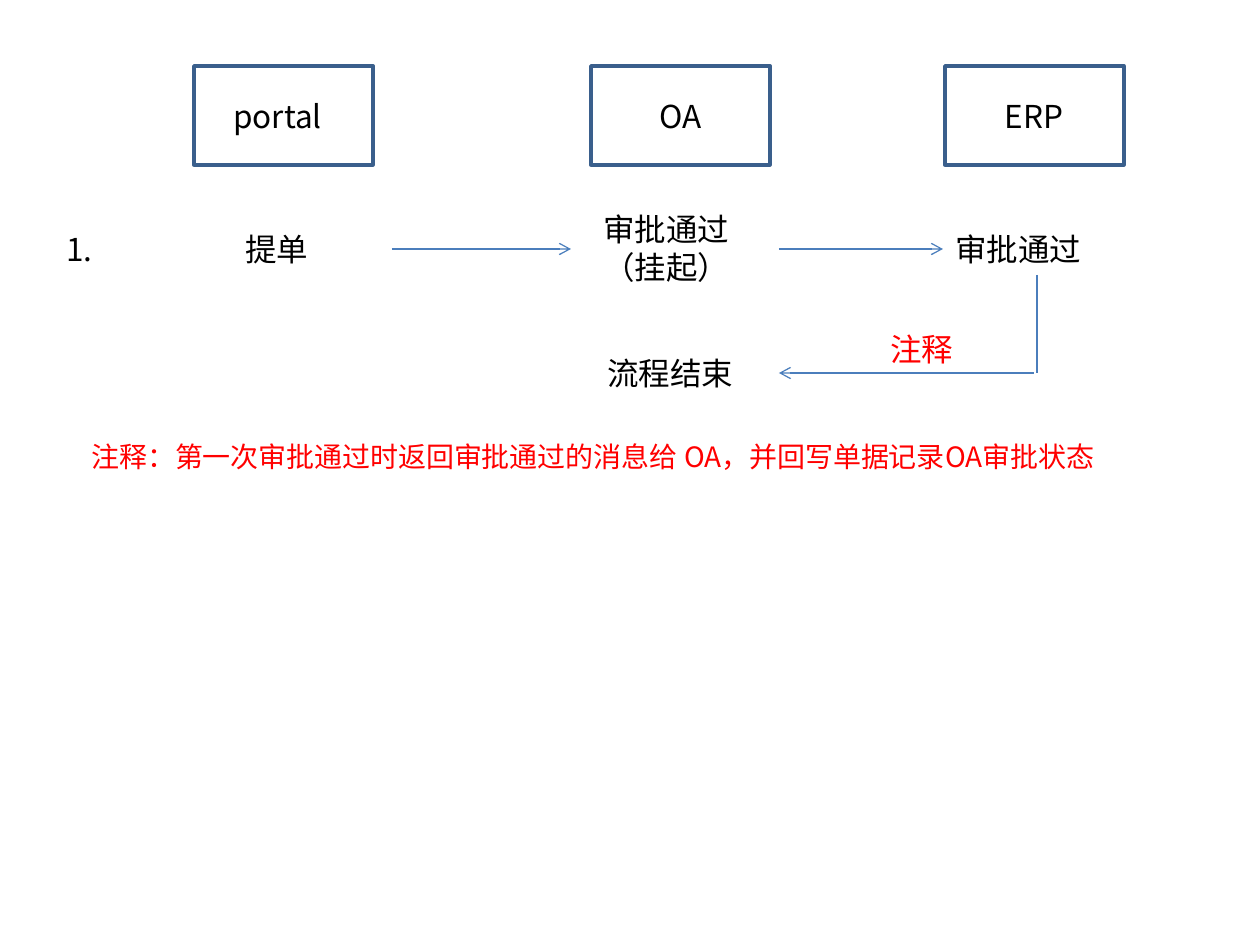
from typing import NamedTuple

from lxml import etree
from pptx import Presentation, util as u
from pptx.dml.color import RGBColor
from pptx.enum import shapes, text
from pptx.oxml.ns import qn

SCALE = 914400 / 126
FONT = "Noto Sans CJK SC"
BLACK, WHITE, RED = "000000", "FFFFFF", "FF0000"
EDGE, BLUE = "3A5F8C", "4B7EBC"
PAD = 13


class Box(NamedTuple):
    words: str
    left: int
    shift: int = 0


class Label(NamedTuple):
    words: str
    left: int
    top: int
    width: int
    height: int = 50
    size: int = 18
    hue: str = BLACK
    wrap: bool = True


class Line(NamedTuple):
    x1: int
    y1: int
    x2: int
    y2: int
    arrow: bool = True


BOXES = [Box("portal", 194, 11), Box("OA", 591), Box("ERP", 945)]
MID, LOW = 249, 373
LINES = [
    Line(392, MID, 571, MID),
    Line(779, MID, 943, MID),
    Line(1037, 275, 1037, LOW, arrow=False),
    Line(1034, LOW, 779, LOW),
]
LABELS = [
    Label("1.", 54, 224, 110),
    Label("提单", 233, 224, 100),
    Label("审批通过（挂起）", 591, 204, 189, 89),
    Label("审批通过", 943, 224, 205),
    Label("流程结束", 595, 348, 169),
    Label("注释", 878, 324, 89, hue=RED, wrap=False),
    Label("注释：第一次审批通过时返回审批通过的消息给 OA，并回写单据记录OA审批状态",
          79, 433, 1181, 47, size=16, hue=RED),
]


def px(num: int) -> u.Emu:
    return u.Emu(round(num * SCALE))


def color(code: str) -> RGBColor:
    return RGBColor.from_string(code)


def write(frame, words: str, size: int, hue: str) -> None:
    """Set the text, with one font for Latin and East Asian letters."""
    frame.text = words
    for run in frame.paragraphs[0].runs:
        run.font.size = u.Pt(size)
        run.font.name = FONT
        run.font.color.rgb = color(hue)
        props = run.font._element
        etree.SubElement(props, qn("a:ea")).set("typeface", FONT)


def draw_box(slide, box: Box) -> None:
    """Draw a system box; shift moves the words' right margin inwards."""
    shape = slide.shapes.add_shape(
        shapes.MSO_SHAPE.RECTANGLE, px(box.left), px(66), px(179), px(99))
    shape.shadow.inherit = False
    shape.fill.solid()
    shape.fill.fore_color.rgb = color(WHITE)
    shape.line.color.rgb = color(EDGE)
    shape.line.width = u.Pt(2)
    frame = shape.text_frame
    frame.margin_right = px(PAD + box.shift)
    frame.vertical_anchor = text.MSO_ANCHOR.MIDDLE
    write(frame, box.words, 18, BLACK)
    frame.paragraphs[0].alignment = text.PP_ALIGN.CENTER


def draw_label(slide, label: Label) -> None:
    shape = slide.shapes.add_textbox(
        px(label.left), px(label.top), px(label.width), px(label.height))
    frame = shape.text_frame
    frame.word_wrap = label.wrap
    frame.auto_size = text.MSO_AUTO_SIZE.SHAPE_TO_FIT_TEXT
    write(frame, label.words, label.size, label.hue)


def draw_line(slide, line: Line) -> None:
    shape = slide.shapes.add_connector(
        shapes.MSO_CONNECTOR.STRAIGHT,
        px(line.x1), px(line.y1), px(line.x2), px(line.y2))
    shape.line.color.rgb = color(BLUE)
    shape.line.width = u.Pt(0.75)
    props = shape._element.spPr
    if line.arrow:
        etree.SubElement(props.find(qn("a:ln")), qn("a:tailEnd")).set("type", "arrow")
    etree.SubElement(props, qn("a:effectLst"))


def main() -> None:
    deck = Presentation()
    deck.slide_width, deck.slide_height = px(1260), px(945)
    slide = deck.slides.add_slide(deck.slide_layouts[6])
    for box in BOXES:
        draw_box(slide, box)
    for line in LINES:
        draw_line(slide, line)
    for label in LABELS:
        draw_label(slide, label)
    deck.save("out.pptx")


if __name__ == "__main__":
    main()
